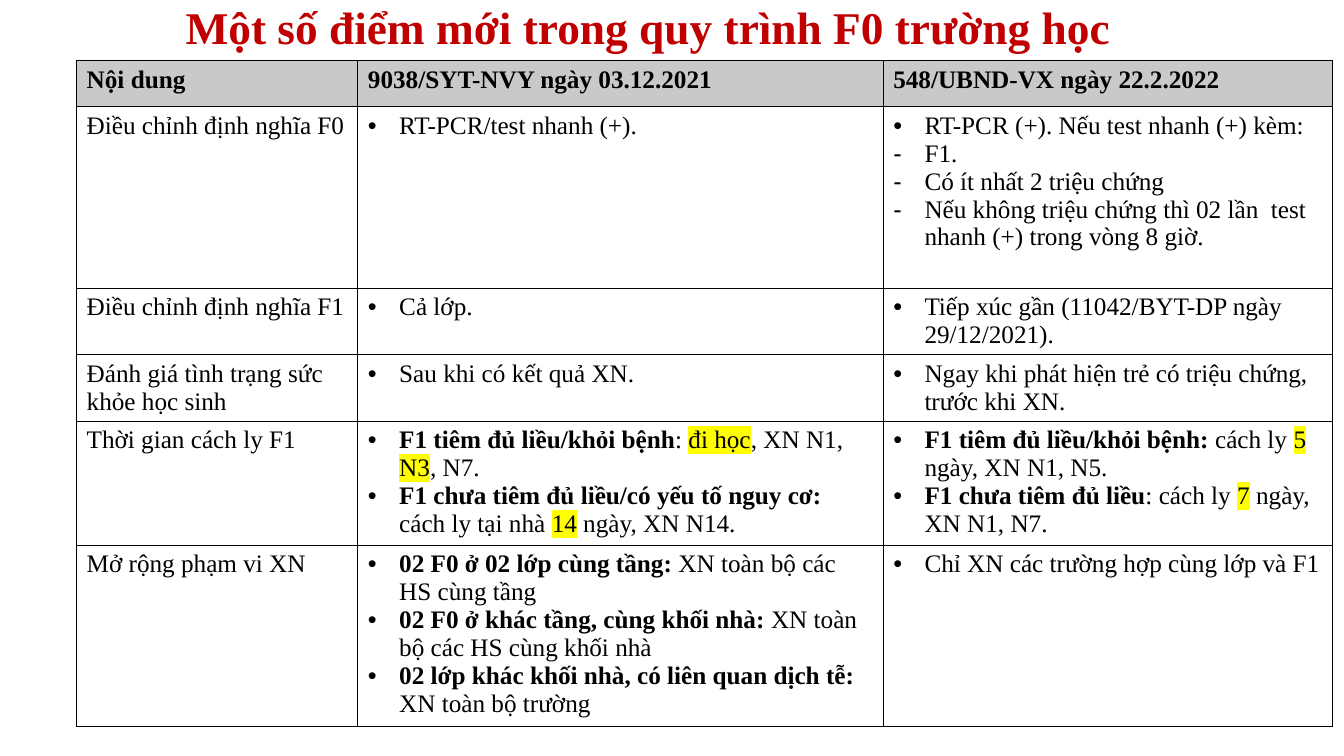
from lxml import etree
from pptx import Presentation
from pptx.dml.color import RGBColor
from pptx.enum.text import MSO_ANCHOR, MSO_AUTO_SIZE, PP_ALIGN
from pptx.oxml.ns import qn
from pptx.util import Inches, Pt

LEFT, MIDDLE, NO_FIT = PP_ALIGN.LEFT, MSO_ANCHOR.MIDDLE, MSO_AUTO_SIZE.NONE
FONT = "Times New Roman"
COLUMNS = [2.79, 5.21, 4.46]
ROWS = [0.46, 1.8, 0.66, 0.66, 1.23, 1.8]
PLAIN, BOLD, MARK = "plain", "bold", "mark"

# Each cell lists its paragraphs: a bullet sign, then (text, style) runs
CELLS = [
    [[("", ("Nội dung", BOLD))],
     [("", ("9038/SYT-NVY ngày 03.12.2021", BOLD))],
     [("", ("548/UBND-VX ngày 22.2.2022", BOLD))]],
    [[("", ("Điều chỉnh định nghĩa F0", PLAIN))],
     [("•", ("RT-PCR/test nhanh (+).", PLAIN))],
     [("•", ("RT-PCR (+). Nếu test nhanh (+) kèm:", PLAIN)),
      ("-", ("F1.", PLAIN)),
      ("-", ("Có ít nhất 2 triệu chứng", PLAIN)),
      ("-", ("Nếu không triệu chứng thì 02 lần  test nhanh (+) trong vòng 8 giờ.", PLAIN))]],
    [[("", ("Điều chỉnh định nghĩa F1", PLAIN))],
     [("•", ("Cả lớp.", PLAIN))],
     [("•", ("Tiếp xúc gần (11042/BYT-DP ngày 29/12/2021).", PLAIN))]],
    [[("", ("Đánh giá tình trạng sức khỏe học sinh", PLAIN))],
     [("•", ("Sau khi có kết quả XN.", PLAIN))],
     [("•", ("Ngay khi phát hiện trẻ có triệu chứng, trước khi XN.", PLAIN))]],
    [[("", ("Thời gian cách ly F1", PLAIN))],
     [("•", ("F1 tiêm đủ liều/khỏi bệnh", BOLD), (": ", PLAIN), ("đi học", MARK),
       (", XN N1, ", PLAIN), ("N3", MARK), (", N7.", PLAIN)),
      ("•", ("F1 chưa tiêm đủ liều/có yếu tố nguy cơ: ", BOLD),
       ("cách ly tại nhà ", PLAIN), ("14", MARK), (" ngày, XN N14.", PLAIN))],
     [("•", ("F1 tiêm đủ liều/khỏi bệnh:", BOLD), (" cách ly ", PLAIN), ("5", MARK),
       (" ngày, XN N1, N5.", PLAIN)),
      ("•", ("F1 chưa tiêm đủ liều", BOLD), (": cách ly ", PLAIN), ("7", MARK),
       (" ngày, XN N1, N7.", PLAIN))]],
    [[("", ("Mở rộng phạm vi XN", PLAIN))],
     [("•", ("02 F0 ở 02 lớp cùng tầng:", BOLD), (" XN toàn bộ các HS cùng tầng", PLAIN)),
      ("•", ("02 F0 ở khác tầng, cùng khối nhà: ", BOLD),
       ("XN toàn bộ các HS cùng khối nhà", PLAIN)),
      ("•", ("02 lớp khác khối nhà, có liên quan dịch tễ: ", BOLD),
       ("XN toàn bộ trường", PLAIN))],
     [("•", ("Chỉ XN các trường hợp cùng lớp và F1", PLAIN))]],
]


def color(hex_string):
    return RGBColor.from_string(hex_string)


def add_run(p, text, size, hex_string, bold):
    r = p.add_run()
    r.text = text
    r.font.size = Pt(size)
    r.font.bold = bold
    r.font.color.rgb = color(hex_string)
    r.font.name = FONT
    return r


prs = Presentation()
prs.slide_width, prs.slide_height = Inches(13.33), Inches(7.5)
s = prs.slides.add_slide(prs.slide_layouts[5])

title = s.shapes.title
title.left, title.top = Inches(1.74), Inches(0)
title.width, title.height = Inches(10.5), Inches(0.59)
tf = title.text_frame
tf.auto_size = NO_FIT
tf.vertical_anchor = MIDDLE
p = tf.paragraphs[0]
p.alignment = LEFT
p.line_spacing = 0.9
add_run(p, "Một số điểm mới trong quy trình F0 trường học", 32.4, "C00000", True)

table = s.shapes.add_table(len(ROWS), len(COLUMNS), Inches(0.76), Inches(0.6),
                           Inches(sum(COLUMNS)), Inches(sum(ROWS))).table
table.first_row = table.horz_banding = False
for column, width in zip(table.columns, COLUMNS):
    column.width = Inches(width)
for row, height in zip(table.rows, ROWS):
    row.height = Inches(height)

for i, row in enumerate(CELLS):
    for j, paragraphs in enumerate(row):
        cell = table.cell(i, j)
        tcPr = cell._tc.get_or_add_tcPr()
        for side in ("lnL", "lnR", "lnT", "lnB"):
            line = etree.SubElement(tcPr, qn(f"a:{side}"), w=str(Pt(1)))
            fill = etree.SubElement(line, qn("a:solidFill"))
            etree.SubElement(fill, qn("a:srgbClr"), val="000000")
        if i == 0:
            cell.fill.solid()
            cell.fill.fore_color.rgb = color("C9C9C9")
        else:
            cell.fill.background()

        tf = cell.text_frame
        for k, (bullet, *runs) in enumerate(paragraphs):
            p = tf.add_paragraph() if k else tf.paragraphs[0]
            if bullet:
                pPr = p._p.get_or_add_pPr()
                pPr.set("marL", str(Inches(0.31)))
                pPr.set("indent", str(-Inches(0.31)))
                etree.SubElement(pPr, qn("a:buFont"), typeface="Arial")
                etree.SubElement(pPr, qn("a:buChar"), char=bullet)
            for text, style in runs:
                r = add_run(p, text, 18, "000000", style == BOLD)
                if style == MARK:
                    highlight = etree.Element(qn("a:highlight"))
                    etree.SubElement(highlight, qn("a:srgbClr"), val="FFFF00")
                    r._r.rPr.find(qn("a:latin")).addprevious(highlight)

prs.save("out.pptx")
